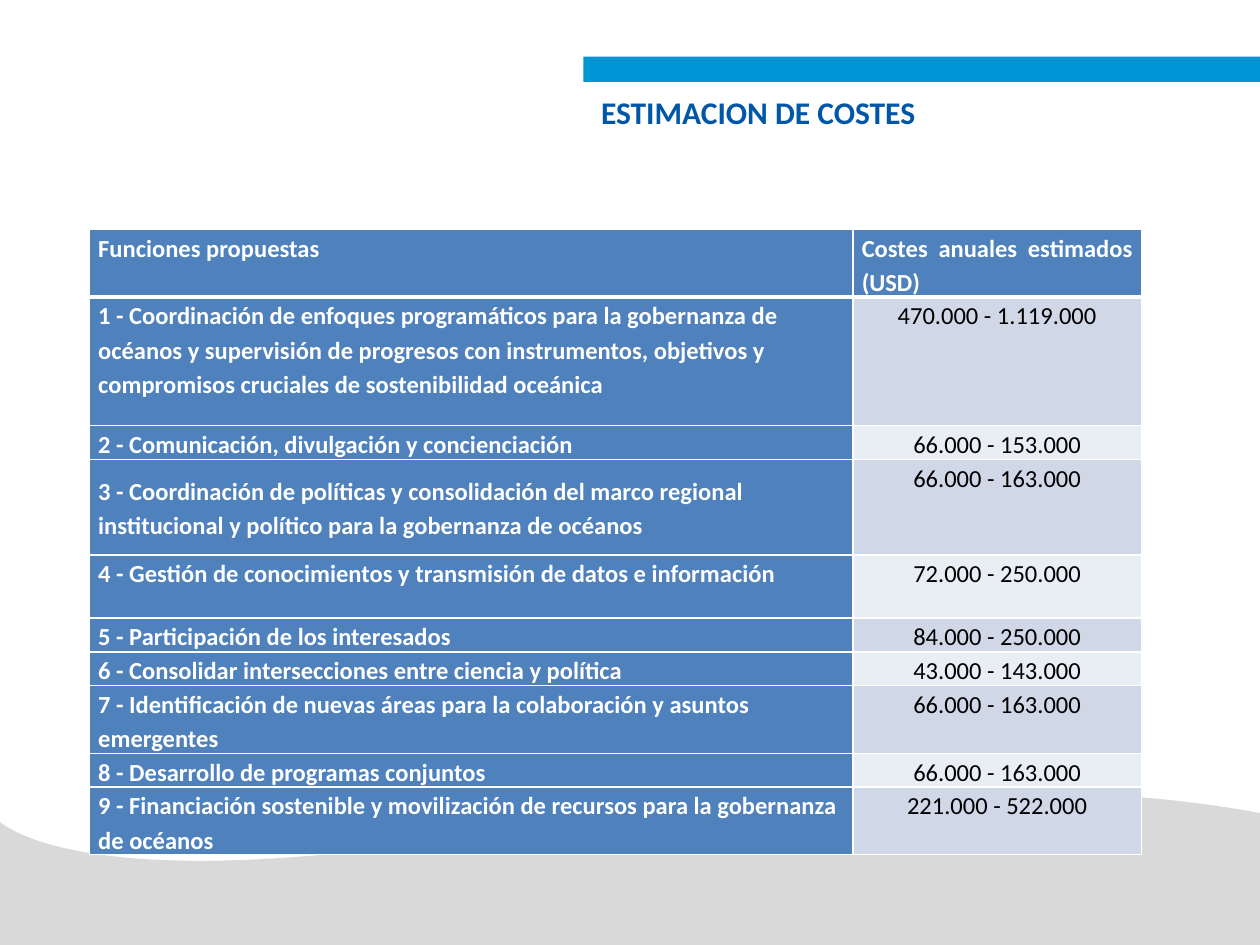
from dataclasses import dataclass

from lxml.etree import SubElement
from pptx import Presentation
from pptx.dml.color import RGBColor
from pptx.enum.shapes import MSO_SHAPE
from pptx.enum.text import MSO_ANCHOR, MSO_AUTO_SIZE, PP_ALIGN
from pptx.oxml.ns import qn
from pptx.util import Inches, Pt


@dataclass(frozen=True)
class Theme:
    """Colours, typeface and sizes of the slide."""
    font: str = "Calibri"
    title_size: int = 18
    table_size: int = 14
    title: str = "0057A8"
    bar: str = "0095D4"
    wave: str = "D9D9D9"
    head: str = "4F81BD"
    bands: tuple = ("D0D8E8", "E9EDF4")
    light: str = "FFFFFF"
    dark: str = "000000"
    rule: int = 1
    head_rule: int = 3


THEME = Theme()
GRID_COLUMNS, GRID_ROWS = 10, 7.5
CELL_WIDTHS = (6.06, 2.29)
HEADINGS = ("Funciones propuestas", "Costes anuales estimados (USD)")
COSTS = (
    ("1 - Coordinación de enfoques programáticos para la gobernanza de océanos y "
     "supervisión de progresos con instrumentos, objetivos y compromisos cruciales "
     "de sostenibilidad oceánica", "470.000 - 1.119.000", 1.02, MSO_ANCHOR.TOP),
    ("2 - Comunicación, divulgación y concienciación",
     "66.000 - 153.000", 0.24, MSO_ANCHOR.TOP),
    ("3 - Coordinación de políticas y consolidación del marco regional institucional "
     "y político para la gobernanza de océanos",
     "66.000 - 163.000", 0.76, MSO_ANCHOR.MIDDLE),
    ("4 - Gestión de conocimientos y transmisión de datos e información",
     "72.000 - 250.000", 0.5, MSO_ANCHOR.TOP),
    ("5 - Participación de los interesados",
     "84.000 - 250.000", 0.24, MSO_ANCHOR.TOP),
    ("6 - Consolidar intersecciones entre ciencia y política",
     "43.000 - 143.000", 0.24, MSO_ANCHOR.TOP),
    ("7 - Identificación de nuevas áreas para la colaboración y asuntos emergentes",
     "66.000 - 163.000", 0.5, MSO_ANCHOR.TOP),
    ("8 - Desarrollo de programas conjuntos",
     "66.000 - 163.000", 0.24, MSO_ANCHOR.MIDDLE),
    ("9 - Financiación sostenible y movilización de recursos para la gobernanza "
     "de océanos", "221.000 - 522.000", 0.5, MSO_ANCHOR.MIDDLE),
)


def apply(target, values):
    """Set every attribute named in a dict of format values."""
    for name, value in values.items():
        setattr(target, name, value)


def area(*units):
    """Turn grid columns and rows into lengths."""
    return [Inches(unit) for unit in units]


def style_font(font, size, colour, bold):
    """Give a font the theme's typeface with a size, colour and weight."""
    apply(font, {"name": THEME.font, "size": Pt(size), "bold": bold})
    font.color.rgb = RGBColor.from_string(colour)


def paint(shape, colour):
    """Fill a shape plainly, with no outline or shadow."""
    shape.shadow.inherit = False
    shape.fill.solid()
    shape.fill.fore_color.rgb = RGBColor.from_string(colour)
    shape.line.fill.background()


def curve(start, first, second, end, steps=40):
    """List points along a cubic curve after its start."""
    points = []
    for step in range(1, steps + 1):
        t = step / steps
        weights = ((1 - t) ** 3, 3 * t * (1 - t) ** 2, 3 * t ** 2 * (1 - t), t ** 3)
        points.append(tuple(
            sum(weight * value for weight, value in zip(weights, axis))
            for axis in zip(start, first, second, end)))
    return points


def add_wave(page):
    """Draw the grey wave along the foot of the page."""
    left, right, crest, trough = -0.02, 10.04, (10.04, 6.46), (3.78, 6.63)
    points = [
        crest,
        *curve(crest, (8.77, 6.22), (6.79, 6.16), trough),
        *curve(trough, (1, 7.07), (0.19, 6.68), (left, 6.51)),
        (left, GRID_ROWS),
    ]
    builder = page.shapes.build_freeform(*area(right, GRID_ROWS))
    builder.add_line_segments([area(*point) for point in points], close=True)
    paint(builder.convert_to_shape(), THEME.wave)


def add_bar(page):
    """Draw the blue bar above the title."""
    bar = page.shapes.add_shape(MSO_SHAPE.RECTANGLE, *area(4.63, 0.45, 5.4, 0.2))
    paint(bar, THEME.bar)


def add_title(page, text):
    """Place and format the title placeholder."""
    title = page.shapes.title
    apply(title, dict(zip(("left", "top", "width", "height"), area(4.67, 0.69, 5, 0.4))))
    frame = title.text_frame
    frame.text = text
    apply(frame, {"word_wrap": True, "vertical_anchor": MSO_ANCHOR.TOP,
                  "auto_size": MSO_AUTO_SIZE.SHAPE_TO_FIT_TEXT})
    para = frame.paragraphs[0]
    para.alignment = PP_ALIGN.LEFT
    style_font(para.font, THEME.title_size, THEME.title, True)


def add_borders(cell, top, bottom):
    """Rule the four sides of a table cell in the light colour."""
    properties = cell._tc.get_or_add_tcPr()
    widths = {"lnL": THEME.rule, "lnR": THEME.rule, "lnT": top, "lnB": bottom}
    for side, width in widths.items():
        line = SubElement(properties, qn(f"a:{side}"), w=str(Pt(width)))
        fill = SubElement(line, qn("a:solidFill"))
        SubElement(fill, qn("a:srgbClr"), val=THEME.light)


def fill_cell(cell, text, fill, colour, bold, align, anchor=MSO_ANCHOR.TOP,
              top=THEME.rule, bottom=THEME.rule):
    """Write and format one table cell."""
    add_borders(cell, top, bottom)
    cell.fill.solid()
    cell.fill.fore_color.rgb = RGBColor.from_string(fill)
    apply(cell, {"text": text, "vertical_anchor": anchor,
                 "margin_left": Inches(0.07), "margin_right": Inches(0.07),
                 "margin_top": 0, "margin_bottom": 0})
    para = cell.text_frame.paragraphs[0]
    apply(para, {"alignment": align, "line_spacing": 1.15, "space_after": Pt(14.4)})
    style_font(para.runs[0].font, THEME.table_size, colour, bold)


def add_cost_table(page):
    """Build the table of functions and yearly costs."""
    heights = [0.5, *(cost[2] for cost in COSTS)]
    table = page.shapes.add_table(
        len(heights), len(CELL_WIDTHS),
        *area(0.71, 1.82, sum(CELL_WIDTHS), sum(heights))).table
    for column, width in zip(table.columns, CELL_WIDTHS):
        column.width = Inches(width)
    for row, height in zip(table.rows, heights):
        row.height = Inches(height)
    for index, align in enumerate((PP_ALIGN.LEFT, PP_ALIGN.JUSTIFY)):
        fill_cell(table.cell(0, index), HEADINGS[index], THEME.head, THEME.light,
                  True, align, bottom=THEME.head_rule)
    for index, (function, cost, _, anchor) in enumerate(COSTS):
        top = THEME.rule if index else THEME.head_rule
        fill_cell(table.cell(index + 1, 0), function, THEME.head, THEME.light,
                  True, PP_ALIGN.LEFT, anchor, top)
        fill_cell(table.cell(index + 1, 1), cost, THEME.bands[index % 2], THEME.dark,
                  False, PP_ALIGN.CENTER, top=top)


def main():
    """Build the cost estimate slide and save it."""
    deck = Presentation()
    apply(deck, {"slide_width": Inches(GRID_COLUMNS), "slide_height": Inches(GRID_ROWS)})
    page = deck.slides.add_slide(deck.slide_layouts[5])
    add_wave(page)
    add_bar(page)
    add_title(page, "ESTIMACION DE COSTES")
    add_cost_table(page)
    deck.save("out.pptx")


if __name__ == "__main__":
    main()
